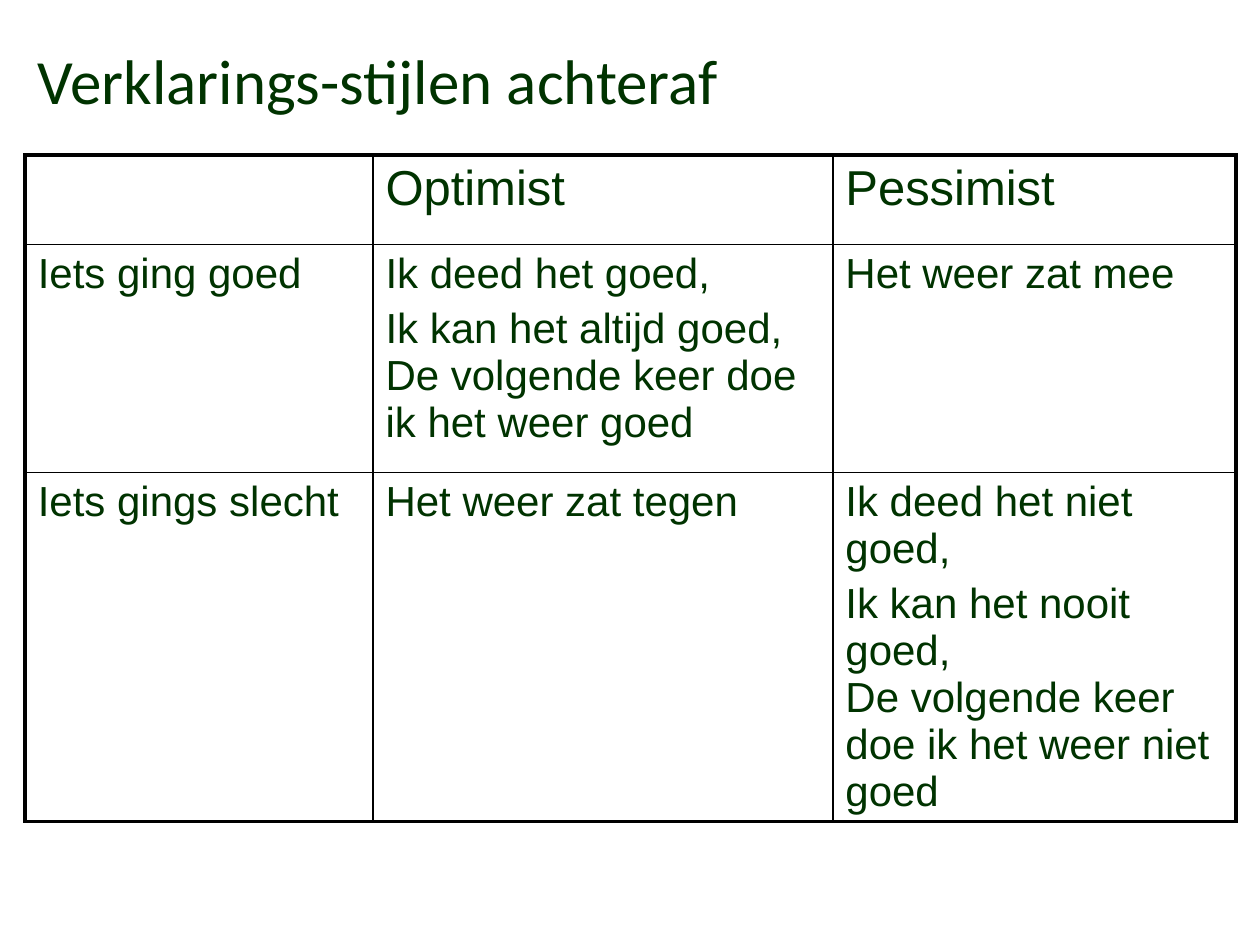
from lxml import etree
from pptx import Presentation
from pptx.dml.color import RGBColor
from pptx.enum.text import MSO_ANCHOR, PP_ALIGN
from pptx.oxml.ns import qn
from pptx.util import Inches, Pt

LEFT = PP_ALIGN.LEFT
MIDDLE = MSO_ANCHOR.MIDDLE
GREEN = RGBColor(0x00, 0x33, 0x00)
BLACK = RGBColor(0x00, 0x00, 0x00)
THIN, THICK = Pt(1), Pt(2.25)

COLS = [2.76, 3.65, 3.2]
ROWS = [0.71, 1.81, 2.32]
# Each cell is a list of paragraphs; \v is a line break
CELLS = [
    [[], ["Optimist"], ["Pessimist"]],
    [["Iets ging goed"],
     ["Ik deed het goed,",
      "Ik kan het altijd goed,\vDe volgende keer doe ik het weer goed"],
     ["Het weer zat mee"]],
    [["Iets gings slecht"],
     ["Het weer zat tegen"],
     ["Ik deed het niet goed,",
      "Ik kan het nooit goed,\vDe volgende keer doe ik het weer niet goed"]],
]


def style(para, font, size):
    para.alignment = LEFT
    for run in para.runs:
        run.font.name = font
        run.font.size = Pt(size)
        run.font.color.rgb = GREEN


def add_title(slide, left, top, width, height):
    title = slide.shapes.title
    title.left, title.top = Inches(left), Inches(top)
    title.width, title.height = Inches(width), Inches(height)
    frame = title.text_frame
    frame.text = "Verklarings-stijlen achteraf"
    frame.vertical_anchor = MIDDLE
    frame.paragraphs[0].line_spacing = 0.9
    style(frame.paragraphs[0], "Calibri", 36)


def set_edges(cell, outer):
    """Draw the four borders, thick where the edge is on the table's rim."""
    props = cell._tc.get_or_add_tcPr()
    for i, side in enumerate("LRTB"):
        width = THICK if outer[side] else THIN
        line = etree.Element(qn("a:ln" + side), w=str(width))
        fill = etree.SubElement(line, qn("a:solidFill"))
        etree.SubElement(fill, qn("a:srgbClr"), val=str(BLACK))
        props.insert(i, line)


def fill_cell(cell, lines, size):
    cell.fill.background()
    frame = cell.text_frame
    for i, line in enumerate(lines):
        para = frame.paragraphs[0] if i == 0 else frame.add_paragraph()
        para.text = line
        para.space_before = Pt(size * 0.2)
        style(para, "Arial", size)


def add_grid(slide, left, top):
    frame = slide.shapes.add_table(
        len(ROWS), len(COLS), Inches(left), Inches(top),
        Inches(sum(COLS)), Inches(sum(ROWS)))
    table = frame.table
    table.first_row = table.horz_banding = False
    for col, width in zip(table.columns, COLS):
        col.width = Inches(width)
    for row, height in zip(table.rows, ROWS):
        row.height = Inches(height)
    for r, row in enumerate(CELLS):
        for c, lines in enumerate(row):
            cell = table.cell(r, c)
            fill_cell(cell, lines, 28 if r == 0 else 24)
            set_edges(cell, {"L": c == 0, "R": c == len(COLS) - 1,
                             "T": r == 0, "B": r == len(ROWS) - 1})


def main():
    deck = Presentation()
    deck.slide_width, deck.slide_height = Inches(10), Inches(7.5)
    slide = deck.slides.add_slide(deck.slide_layouts[5])
    add_title(slide, 0.2, 0.33, 9.3, 0.67)
    add_grid(slide, 0.2, 1.23)
    deck.save("out.pptx")


if __name__ == "__main__":
    main()
